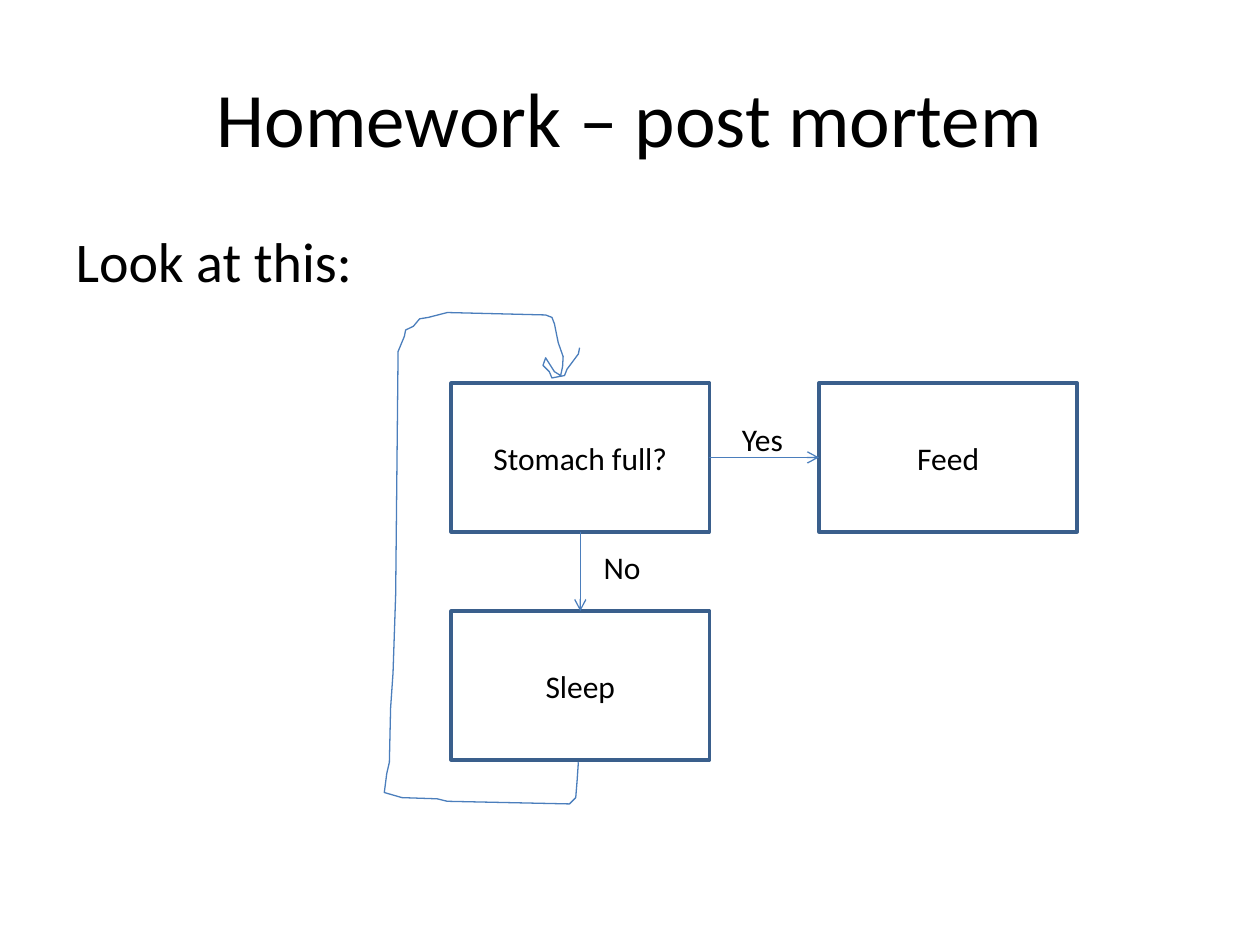
from lxml import etree
from pptx import Presentation
from pptx import util as u
from pptx.dml import color
from pptx.enum import shapes, text
from pptx.oxml import ns

BLACK, OUTLINE, ARROW = "000000", "3A5F8C", "4B7EBC"
LOOP_POINTS = [
    (330.5, 435.6), (329.8, 446), (329, 455.8), (325.4, 459.4), (255.6, 457.9),
    (249.8, 456.5), (229.7, 455.8), (219.6, 452.9), (221, 442.1), (222.5, 435.6),
    (223.2, 404.6), (224.6, 384.5), (226.1, 339.8), (227.5, 200.9), (231.1, 192.2),
    (231.8, 188.6), (236.2, 186.5), (239.8, 182.2), (244.8, 181.4), (255.6, 178.6),
    (311.8, 180), (315.4, 181.4), (316.8, 185), (319, 195.8), (321.8, 203.8),
    (321.5, 209.5), (320.4, 214.6), (316.8, 212.4), (311.8, 204.5), (310.3, 208.8),
    (313.9, 212.4), (315.4, 216), (322.6, 214.6), (324, 211), (330.5, 202.3),
    (331.2, 198.7),
]


def paint(target, hex_value):
    """Give a colour format the colour of a hex string."""
    target.rgb = color.RGBColor.from_string(hex_value)


def draw_line(shape, hex_value, width):
    """Set the colour and width of an outline."""
    paint(shape.line.color, hex_value)
    shape.line.width = u.Pt(width)


def write(shape, words, size, align, anchor):
    """Put one formatted paragraph into a shape."""
    frame = shape.text_frame
    frame.text = words
    frame.word_wrap = True
    frame.vertical_anchor = anchor
    para = frame.paragraphs[0]
    para.alignment = align
    span = para.runs[0]
    span.font.size = u.Pt(size)
    span.font.name = "Calibri"
    paint(span.font.color, BLACK)
    return para


def move(shape, box):
    """Place a shape in a box given in points."""
    shape.left, shape.top, shape.width, shape.height = map(u.Pt, box)


def add_heading(page, box):
    """Fill the title placeholder."""
    move(page.shapes.title, box)
    write(page.shapes.title, "Homework – post mortem", 44,
          text.PP_ALIGN.CENTER, text.MSO_ANCHOR.MIDDLE)


def add_body(page, box):
    """Fill the body placeholder with an unbulleted line."""
    body = page.placeholders[1]
    move(body, box)
    para = write(body, "Look at this:", 32, text.PP_ALIGN.LEFT, text.MSO_ANCHOR.TOP)
    etree.SubElement(para._p.get_or_add_pPr(), ns.qn("a:buNone"))


def add_step(page, words, box):
    """Add an outlined step of the flowchart."""
    step = page.shapes.add_shape(shapes.MSO_SHAPE.RECTANGLE, *map(u.Pt, box))
    step.shadow.inherit = False
    step.fill.background()
    draw_line(step, OUTLINE, 2)
    write(step, words, 18, text.PP_ALIGN.CENTER, text.MSO_ANCHOR.MIDDLE)
    return step


def add_label(page, words, box):
    """Add the answer beside an arrow."""
    label = page.shapes.add_textbox(*map(u.Pt, box))
    write(label, words, 18, text.PP_ALIGN.LEFT, text.MSO_ANCHOR.TOP)
    label.text_frame.auto_size = text.MSO_AUTO_SIZE.SHAPE_TO_FIT_TEXT


def add_arrow(page, start, start_site, end, end_site):
    """Join two steps with an open arrow."""
    arrow = page.shapes.add_connector(shapes.MSO_CONNECTOR.STRAIGHT, 0, 0, 0, 0)
    arrow.begin_connect(start, start_site)
    arrow.end_connect(end, end_site)
    draw_line(arrow, ARROW, 0.75)
    etree.SubElement(arrow.line._get_or_add_ln(), ns.qn("a:tailEnd"), type="arrow")
    etree.SubElement(arrow._element.spPr, ns.qn("a:effectLst"))


def add_loop(page):
    """Add the hand-drawn way back to the question."""
    points = [(u.Pt(x), u.Pt(y)) for x, y in LOOP_POINTS]
    builder = page.shapes.build_freeform(*points[0])
    builder.add_line_segments(points[1:], close=False)
    loop = builder.convert_to_shape()
    loop.shadow.inherit = False
    loop.fill.background()
    draw_line(loop, ARROW, 0.75)


def add_flowchart(page, box):
    """Lay out the steps, arrows and answers in the given box."""
    left, top, width, height = box
    step_width, step_height = 147.6, 85
    right, bottom = left + width - step_width, top + height - step_height
    question = add_step(page, "Stomach full?", (left, top, step_width, step_height))
    feed = add_step(page, "Feed", (right, top, step_width, step_height))
    sleep = add_step(page, "Sleep", (left, bottom, step_width, step_height))
    add_arrow(page, question, 3, feed, 1)
    add_arrow(page, question, 2, sleep, 0)
    add_label(page, "Yes", (left + 159, top + 17.3, 51, 29))
    add_label(page, "No", (left + 80, top + 90.7, 51, 29))
    add_loop(page)


def main():
    """Build and save the slide."""
    deck = Presentation()
    deck.slide_width, deck.slide_height = u.Pt(720), u.Pt(540)
    page = deck.slides.add_slide(deck.slide_layouts[1])
    add_heading(page, (36, 21.6, 648, 90))
    add_body(page, (36, 126, 648, 356.4))
    add_flowchart(page, (257.8, 218.9, 357.8, 215.3))
    deck.save("out.pptx")


if __name__ == "__main__":
    main()
